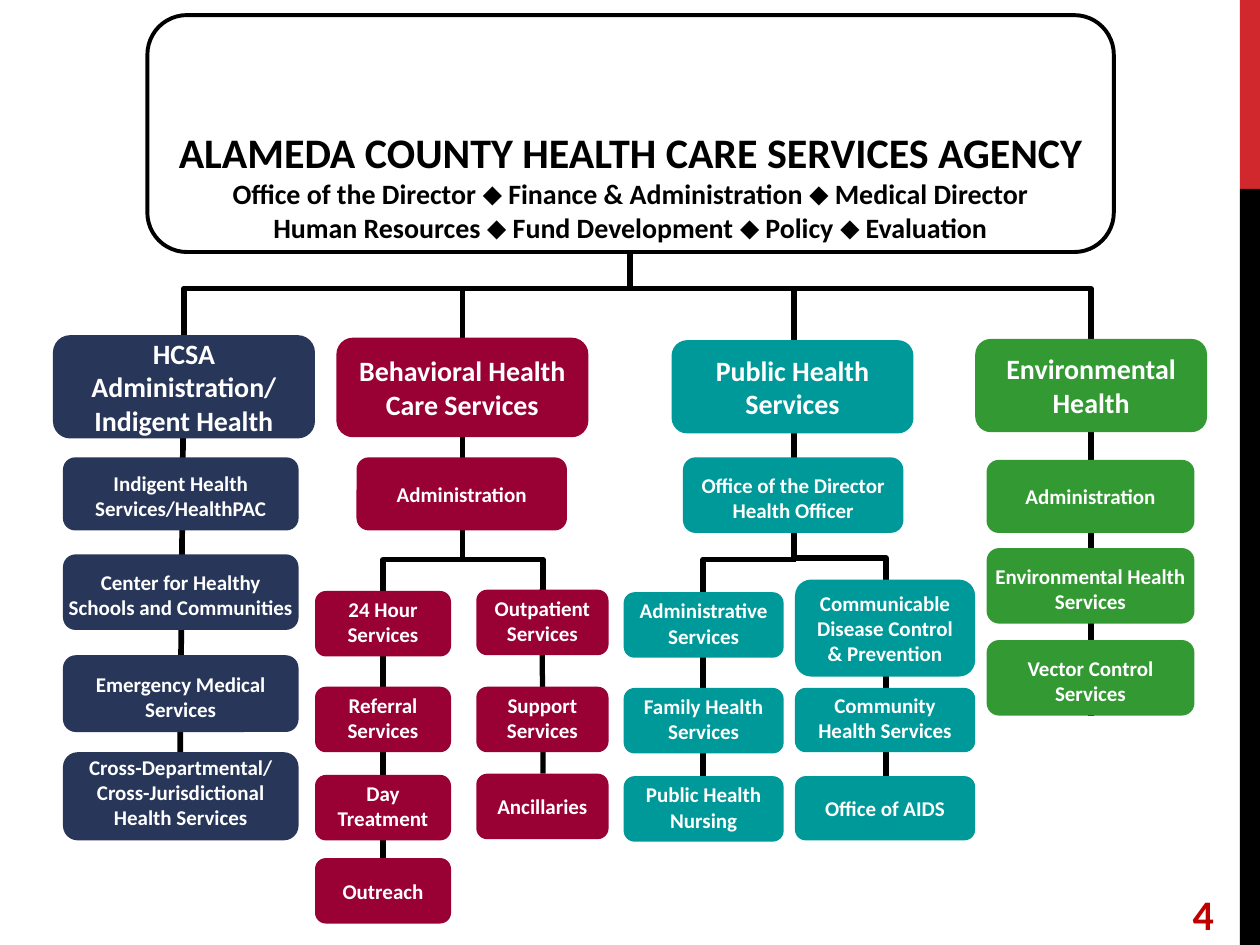
from lxml import etree
from pptx import Presentation
from pptx import util as u
from pptx.dml.color import RGBColor
from pptx.enum import shapes, text
from pptx.oxml.ns import qn

THEME = {
    "font": "Calibri", "black": "000000", "white": "FFFFFF", "red": "D1282E",
    "number": "C00000", "navy": "283659", "crimson": "990033",
    "teal": "009999", "green": "339933",
    "title": 24, "head": 16, "body": 12,
}
MIDDLE, BOTTOM, TOP = text.MSO_ANCHOR.MIDDLE, text.MSO_ANCHOR.BOTTOM, text.MSO_ANCHOR.TOP

# Content: head is (text, left, top, width, height);
# each column is (left, width, [(text, top, height, anchor)])
TITLE = [
    ("ALAMEDA COUNTY HEALTH CARE SERVICES AGENCY", "title"),
    ("Office of the Director ⬥ Finance & Administration ⬥ Medical Director", "head"),
    ("Human Resources ⬥ Fund Development ⬥ Policy ⬥ Evaluation", "head"),
]
DEPARTMENTS = [
    ("navy", ("HCSA\nAdministration/\nIndigent Health", 0.42, 2.66, 2.08, 0.82), [
        (0.5, 1.87, [
            ("Indigent Health Services/HealthPAC", 3.63, 0.58, BOTTOM),
            ("Center for Healthy\nSchools and Communities", 4.4, 0.6, BOTTOM),
            ("Emergency Medical\nServices", 5.2, 0.61, BOTTOM),
            ("Cross-Departmental/\nCross-Jurisdictional\nHealth Services", 5.97, 0.7, BOTTOM),
        ]),
    ]),
    ("crimson", ("Behavioral Health Care Services", 2.67, 2.68, 2, 0.79), [
        (2.83, 1.67, [("Administration", 3.63, 0.58, MIDDLE)]),
        (2.5, 1.08, [
            ("24 Hour Services", 4.69, 0.52, BOTTOM),
            ("Referral Services", 5.45, 0.52, BOTTOM),
            ("Day Treatment", 6.15, 0.52, BOTTOM),
            ("Outreach", 6.81, 0.52, MIDDLE),
        ]),
        (3.78, 1.05, [
            ("Outpatient Services", 4.68, 0.52, BOTTOM),
            ("Support Services", 5.45, 0.52, BOTTOM),
            ("Ancillaries", 6.14, 0.52, MIDDLE),
        ]),
    ]),
    ("teal", ("Public Health Services", 5.33, 2.7, 1.92, 0.74), [
        (5.42, 1.75, [("Office of the Director Health Officer", 3.63, 0.6, BOTTOM)]),
        (4.95, 1.27, [
            ("Administrative Services", 4.7, 0.52, BOTTOM),
            ("Family Health Services", 5.46, 0.52, BOTTOM),
            ("Public Health Nursing", 6.16, 0.52, BOTTOM),
        ]),
        (6.31, 1.43, [
            ("Communicable Disease Control & Prevention", 4.6, 0.77, BOTTOM),
            ("Community Health Services", 5.46, 0.51, BOTTOM),
            ("Office of AIDS", 6.16, 0.51, MIDDLE),
        ]),
    ]),
    ("green", ("Environmental Health", 7.74, 2.69, 1.84, 0.74), [
        (7.83, 1.65, [
            ("Administration", 3.65, 0.58, MIDDLE),
            ("Environmental Health\nServices", 4.35, 0.6, BOTTOM),
            ("Vector Control\nServices", 5.08, 0.6, BOTTOM),
        ]),
    ]),
]
# Connectors: (x1, y1, x2, y2, points)
STRAIGHT_LINES = [
    (5, 2, 5, 2.31, 3.25),
    (1.46, 2.66, 1.43, 5.97, 3.25),
    (3.67, 2.29, 3.67, 4.44, 3.25),
    (6.3, 2.31, 6.3, 4.45, 3.25),
    (8.66, 2.69, 8.66, 5.68, 3.25),
    (3.04, 4.69, 3.04, 6.81, 3),
    (4.3, 4.68, 4.31, 6.14, 3),
    (5.58, 4.7, 5.58, 6.16, 3.25),
    (7.03, 4.6, 7.03, 6.16, 3.25),
]
ELBOW_LINES = [
    (4.98, 2.29, 1.46, 2.66, 3.25),
    (4.83, 2.29, 8.66, 2.69, 3),
    (3.67, 4.44, 3.04, 4.69, 3),
    (3.67, 4.44, 4.31, 4.68, 3),
    (6.32, 4.44, 5.58, 4.7, 3),
    (6.31, 4.43, 7.03, 4.6, 3.25),
]


def color(name):
    return RGBColor.from_string(THEME[name])


def write_text(shape, lines, ink="white", anchor=MIDDLE, wrap=True, top=0.05, bottom=0.05):
    """Fill a shape with centred bold lines given as (text, size name)."""
    frame = shape.text_frame
    frame.word_wrap = wrap
    frame.vertical_anchor = anchor
    frame.margin_top, frame.margin_bottom = u.Inches(top), u.Inches(bottom)
    for index, (line, size) in enumerate(lines):
        paragraph = frame.add_paragraph() if index else frame.paragraphs[0]
        paragraph.alignment = text.PP_ALIGN.CENTER
        run = paragraph.add_run()
        run.text = line
        run.font.name, run.font.bold = THEME["font"], True
        run.font.size = u.Pt(THEME[size])
        run.font.color.rgb = color(ink)


def add_box(slide, left, top, width, height, fill=None, kind="ROUNDED_RECTANGLE"):
    shape = slide.shapes.add_shape(getattr(shapes.MSO_SHAPE, kind),
                                   *map(u.Inches, (left, top, width, height)))
    shape.shadow.inherit = False
    if fill:
        shape.fill.solid()
        shape.fill.fore_color.rgb = color(fill)
        shape.line.fill.background()
    else:
        shape.fill.background()
        shape.line.color.rgb = color("black")
        shape.line.width = u.Pt(2.25)
    return shape


def add_unit(slide, label, left, top, width, height, fill, size, anchor):
    box = add_box(slide, left, top, width, height, fill)
    write_text(box, [(line, size) for line in label.split("\n")],
               anchor=anchor, wrap="\n" not in label)


def add_line(slide, x1, y1, x2, y2, points, elbow=False):
    kind = shapes.MSO_CONNECTOR.ELBOW if elbow else shapes.MSO_CONNECTOR.STRAIGHT
    line = slide.shapes.add_connector(kind, *map(u.Inches, (x1, y1, x2, y2)))
    line.line.color.rgb = color("black")
    line.line.width = u.Pt(points)
    properties = line.element.spPr
    if elbow:  # one bend: across, then down
        properties.find(qn("a:prstGeom")).set("prst", "bentConnector2")
    etree.SubElement(properties, qn("a:effectLst"))


def main():
    presentation = Presentation()
    presentation.slide_width, presentation.slide_height = u.Inches(10), u.Inches(7.5)
    slide = presentation.slides.add_slide(presentation.slide_layouts[6])

    # Side stripe
    add_box(slide, 9.84, 0, 0.16, 1.5, "red", "RECTANGLE")
    add_box(slide, 9.84, 1.5, 0.16, 6, "black", "RECTANGLE")

    # Agency box, its text low in the frame
    agency = add_box(slide, 1.17, 0.12, 7.67, 1.88)
    write_text(agency, TITLE, ink="black", anchor=TOP, top=0.79, bottom=0)

    # Connectors, behind the units
    for line in STRAIGHT_LINES:
        add_line(slide, *line)
    for line in ELBOW_LINES:
        add_line(slide, *line, elbow=True)

    # Departments and their units
    for fill, head, columns in DEPARTMENTS:
        add_unit(slide, *head, fill, "head", MIDDLE)
        for left, width, units in columns:
            for label, top, height, anchor in units:
                add_unit(slide, label, left, top, width, height, fill, "body", anchor)

    # Slide number
    number = slide.shapes.add_textbox(*map(u.Inches, (9.27, 7.01, 0.56, 0.49)))
    write_text(number, [("4", "title")], ink="number")

    presentation.save("out.pptx")


if __name__ == "__main__":
    main()
